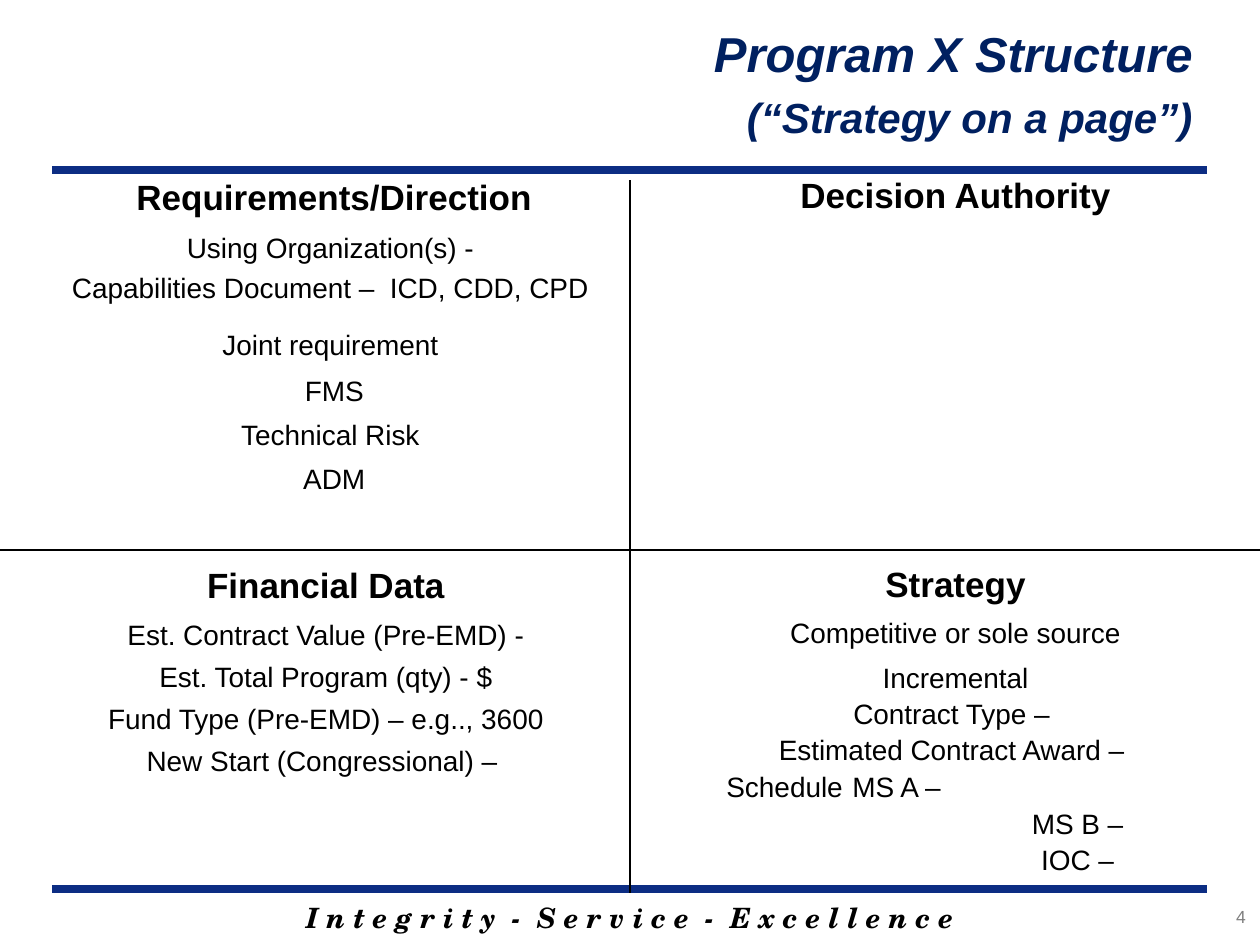
from lxml import etree
from pptx import Presentation
from pptx.dml.color import RGBColor
from pptx.enum.shapes import MSO_CONNECTOR
from pptx.enum.text import MSO_ANCHOR, PP_ALIGN
from pptx.oxml.ns import qn
from pptx.util import Pt

LINE = MSO_CONNECTOR.STRAIGHT
LEFT, MID, RIGHT = PP_ALIGN.LEFT, PP_ALIGN.CENTER, PP_ALIGN.RIGHT
TOP, BOTTOM = MSO_ANCHOR.TOP, MSO_ANCHOR.BOTTOM

HUES = {"ink": "000000", "navy": "002060", "bar": "0C2D83", "grey": "7F7F7F"}
HEAD = {"size": Pt(20), "bold": True}


class Page:
    def __init__(self, deck, face="Arial", size=16):
        self.slide = deck.slides.add_slide(deck.slide_layouts[6])
        self.face = face
        self.size = size

    def rule(self, x1, y1, x2, y2, hue, width):
        line = self.slide.shapes.add_connector(
            LINE, Pt(x1), Pt(y1), Pt(x2), Pt(y2))
        line.line.color.rgb = RGBColor.from_string(HUES[hue])
        line.line.width = Pt(width)
        etree.SubElement(line._element.spPr, qn("a:effectLst"))

    def text(self, spot, rows, hue="ink", align=MID, anchor=TOP):
        """Each row is (text, font values, paragraph values[, indent, tabs])."""
        box = self.slide.shapes.add_textbox(*map(Pt, spot))
        frame = box.text_frame
        frame.word_wrap = True
        frame.vertical_anchor = anchor
        for i, (words, font, form, *more) in enumerate(rows):
            para = frame.paragraphs[0] if i == 0 else frame.add_paragraph()
            for key, val in {"alignment": align, **form}.items():
                setattr(para, key, val)
            if more:
                self.tabs(para, *more)
            run = para.add_run()
            run.text = words
            base = {"name": self.face, "size": Pt(self.size), "bold": False}
            for key, val in {**base, **font}.items():
                setattr(run.font, key, val)
            run.font.color.rgb = RGBColor.from_string(HUES[hue])

    def tabs(self, para, indent, stops=()):
        props = para._p.get_or_add_pPr()
        props.set("marL", str(Pt(indent)))
        props.set("indent", "0")
        if stops:
            tabs = etree.SubElement(props, qn("a:tabLst"))
            for stop in stops:
                etree.SubElement(tabs, qn("a:tab"), pos=str(Pt(stop)), algn="l")


def gap(before, lines=1.0, after=0):
    return {"space_before": Pt(before), "space_after": Pt(after),
            "line_spacing": lines}


def main():
    deck = Presentation()
    deck.slide_width, deck.slide_height = Pt(720), Pt(540)
    page = Page(deck)

    # Footer motto and bars
    page.text((102, 511, 516, 27), [
        ("I n t e g r i t y  -  S e r v i c e  -  E x c e l l e n c e",
         {"name": "TeX Gyre Schola", "bold": True, "italic": True}, {})])
    for y in (97, 508):
        page.rule(30, y, 690, y, "bar", 4.5)

    # Title
    slant = {"bold": True, "italic": True}
    page.text((144, 9.5, 544.5, 75), [
        ("Program X Structure", {**slant, "size": Pt(28)}, {}),
        ("(“Strategy on a page”)", {**slant, "size": Pt(24)}, gap(5))],
        "navy", RIGHT, BOTTOM)

    # Quadrant lines
    page.rule(360, 103, 360, 510.5, "ink", 1.25)
    page.rule(0, 314.5, 720, 314.5, "ink", 1.25)

    # Upper left
    page.text((16, 97, 350, 239), [
        ("Requirements/Direction", HEAD, {}),
        ("Using Organization(s) - ", {}, gap(10.7, 0.8)),
        ("Capabilities Document –  ICD, CDD, CPD ", {}, gap(3.8)),
        ("Joint requirement ", {}, gap(13.6)),
        ("FMS", {}, gap(7.3)),
        ("Technical Risk ", {}, gap(5.8)),
        ("ADM", {}, gap(5.8))])

    # Upper right
    page.text((372, 100, 348, 42), [
        ("Decision Authority", HEAD, gap(0, 0.8))])

    # Lower left
    page.text((16, 323.3, 340.5, 124), [
        ("Financial Data", HEAD, gap(0, 0.8)),
        ("Est. Contract Value (Pre-EMD) -", {}, gap(10.7, 0.8)),
        ("Est. Total Program (qty) - $", {}, gap(4.8)),
        ("Fund Type (Pre-EMD) – e.g.., 3600", {}, gap(4.8)),
        ("New Start (Congressional) – ", {}, gap(4.8))])

    # Lower right
    near = gap(3.8, 0.9)
    page.text((372, 320.4, 348, 201), [
        ("Strategy", HEAD, gap(0, 0.9)),
        ("Competitive or sole source", {}, gap(11.5, 0.7, 4)),
        ("Incremental", {}, gap(8, 0.7, 4)),
        ("Contract Type – ", {}, gap(0, 0.9)),
        ("Estimated Contract Award – ", {}, near),
        ("\tSchedule\tMS A –", {}, {**near, "alignment": LEFT}, 0, (67, 211)),
        ("MS B – ", {}, near, 144),
        ("IOC – ", {}, gap(1), 144)])

    # Page number
    page.text((629, 514, 90, 24), [("4", {"size": Pt(10)}, {})],
              "grey", RIGHT)

    deck.save("out.pptx")


if __name__ == "__main__":
    main()
